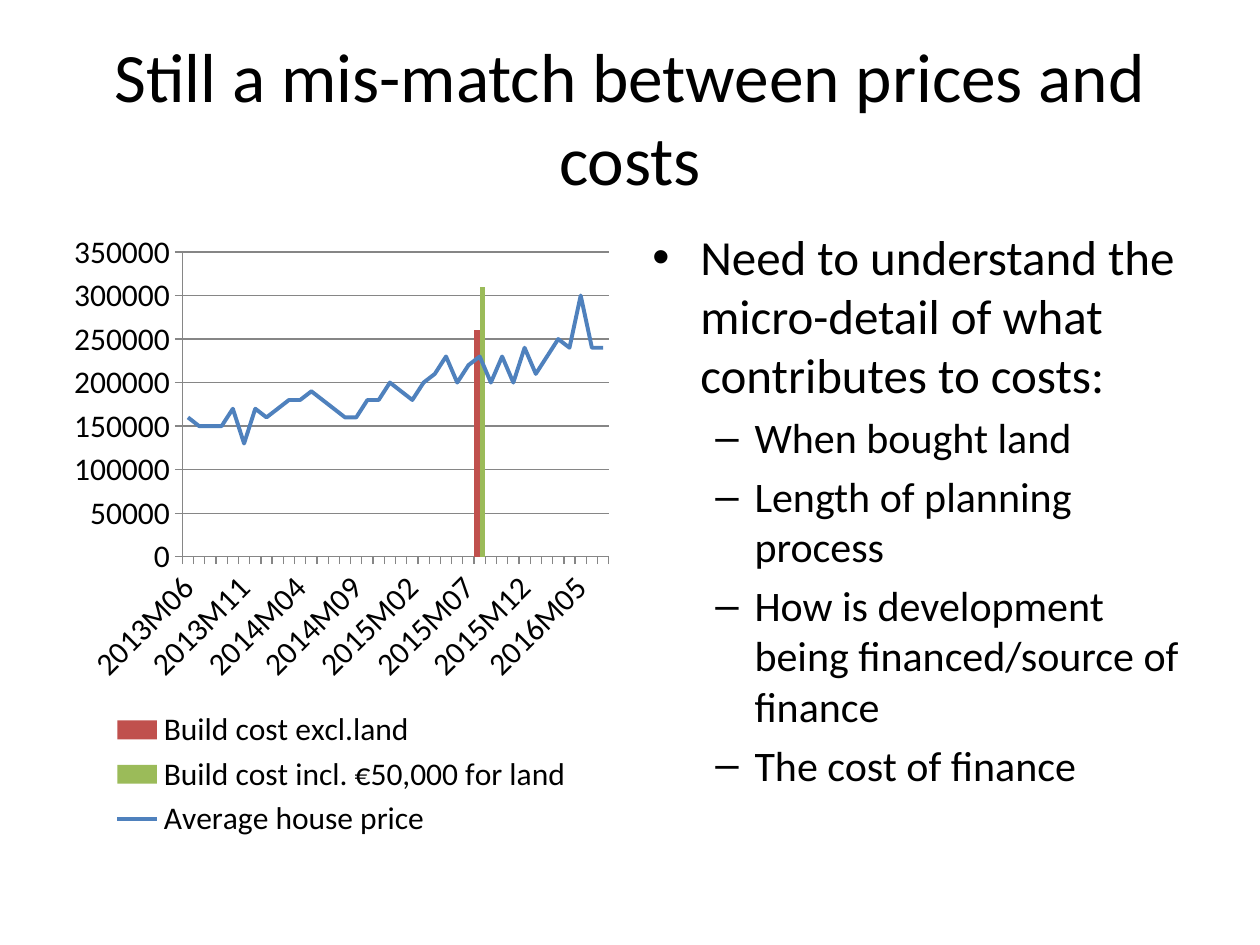
from lxml import etree
from pptx import Presentation
from pptx import util as u
from pptx.chart import data
from pptx.dml import color
from pptx.enum import chart as ch, text
from pptx.oxml import ns

Inches, Pt = u.Inches, u.Pt
BLACK = color.RGBColor(0x00, 0x00, 0x00)
GREY = color.RGBColor(0x86, 0x86, 0x86)
RED = color.RGBColor(0xC0, 0x50, 0x4D)
GREEN = color.RGBColor(0x9B, 0xBB, 0x59)
BLUE = color.RGBColor(0x4F, 0x81, 0xBD)
FONT = "Calibri"


def add_run(paragraph, words, size):
    run = paragraph.add_run()
    run.text = words
    run.font.name, run.font.size = FONT, Pt(size)
    run.font.color.rgb = BLACK


def add_element(parent, tag, **attributes):
    return etree.SubElement(parent, ns.qn(tag), attributes)


presentation = Presentation()
presentation.slide_width, presentation.slide_height = Inches(10), Inches(7.5)
slide = presentation.slides.add_slide(presentation.slide_layouts[6])

# Title
title = slide.shapes.add_textbox(Inches(0.5), Inches(0.3), Inches(9), Inches(1.25))
title.text_frame.word_wrap = True
title.text_frame.vertical_anchor = text.MSO_ANCHOR.MIDDLE
paragraph = title.text_frame.paragraphs[0]
paragraph.alignment = text.PP_ALIGN.CENTER
add_run(paragraph, "Still a mis-match between prices and costs", 39.6)

# Chart data: monthly prices in thousands, build costs in one month only
prices = [160, 150, 150, 150, 170, 130, 170, 160, 170, 180, 180, 190, 180,
          170, 160, 160, 180, 180, 200, 190, 180, 200, 210, 230, 200, 220,
          230, 200, 230, 200, 240, 210, 230, 250, 240, 300, 240, 240]
# Months are counted from June 2013
months = [f"{2013 + i // 12}M{i % 12 + 1:02}" for i in range(5, 5 + len(prices))]
build_month = months.index("2015M08")
chart_data = data.CategoryChartData()
chart_data.categories = months
for name, cost in (("Build cost excl.land", 260000),
                   ("Build cost incl. €50,000 for land", 310000)):
    chart_data.add_series(
        name, [cost if i == build_month else None for i in range(len(months))])
chart_data.add_series("Average house price", [price * 1000 for price in prices])

chart = slide.shapes.add_chart(
    ch.XL_CHART_TYPE.COLUMN_CLUSTERED, Inches(0.5), Inches(1.75),
    Inches(4.42), Inches(4.95), chart_data).chart
chart.font.name, chart.font.size = FONT, Pt(18)
chart.font.color.rgb = BLACK
chart.has_title = False
chart.has_legend = True
chart.legend.position = ch.XL_LEGEND_POSITION.BOTTOM
chart.legend.include_in_layout = False

# Columns
columns = chart.plots[0]
columns.vary_by_categories = False
columns.gap_width, columns.overlap = 0, 0
for series, fill in zip(list(columns.series)[:2], (RED, GREEN)):
    series.format.fill.solid()
    series.format.fill.fore_color.rgb = fill

# Price series moves to a line plot on the same axes
bar_chart = columns._element
price_series = columns.series[2]._element
for bar_setting in price_series.findall(ns.qn("c:invertIfNegative")):
    price_series.remove(bar_setting)
line_chart = bar_chart.makeelement(ns.qn("c:lineChart"))
bar_chart.addnext(line_chart)
add_element(line_chart, "c:grouping", val="standard")
add_element(line_chart, "c:varyColors", val="0")
line_chart.append(price_series)
add_element(line_chart, "c:marker", val="1")
for axis_id in bar_chart.findall(ns.qn("c:axId")):
    add_element(line_chart, "c:axId", val=axis_id.get("val"))
line = chart.plots[1].series[0]
line.smooth = False
line.marker.style = ch.XL_MARKER_STYLE.NONE
line.format.line.color.rgb = BLUE
line.format.line.width = Pt(2.25)

# Axes
value_axis, category_axis = chart.value_axis, chart.category_axis
value_axis.minimum_scale, value_axis.maximum_scale = 0, 350000
value_axis.major_unit = 50000
value_axis.has_major_gridlines = True
value_axis.major_gridlines.format.line.color.rgb = GREY
for axis in (value_axis, category_axis):
    axis.major_tick_mark = ch.XL_TICK_MARK.OUTSIDE
    axis.format.line.color.rgb = GREY
    axis.tick_labels.font.size = Pt(18)
category_axis._element.find(
    ns.qn("c:txPr") + "/" + ns.qn("a:bodyPr")).set("rot", "-2700000")
no_multi_level = category_axis._element.find(ns.qn("c:noMultiLvlLbl"))
for tag, step in (("c:tickLblSkip", "5"), ("c:tickMarkSkip", "1")):
    no_multi_level.addprevious(no_multi_level.makeelement(ns.qn(tag), val=step))

# Bulleted list
body = slide.shapes.add_textbox(Inches(5.08), Inches(1.75), Inches(4.42), Inches(4.95))
body.text_frame.word_wrap = True
points = [
    (0, "Need to understand the micro-detail of what contributes to costs:"),
    (1, "When bought land"),
    (1, "Length of planning process"),
    (1, "How is development being financed/source of finance"),
    (1, "The cost of finance"),
]
# Bullet, left margin, hanging indent and text size by level
levels = [("•", 0.38, -0.38, 28), ("–", 0.81, -0.31, 24)]
for i, (level, words) in enumerate(points):
    bullet, margin, indent, size = levels[level]
    paragraph = body.text_frame.paragraphs[0] if i == 0 else body.text_frame.add_paragraph()
    paragraph.level = level
    paragraph.space_before = Pt(size * 0.2 if i else 0)
    properties = paragraph._p.get_or_add_pPr()
    properties.set("marL", str(Inches(margin)))
    properties.set("indent", str(Inches(indent)))
    add_element(properties, "a:buFont", typeface="Arial")
    add_element(properties, "a:buChar", char=bullet)
    add_run(paragraph, words, size)

presentation.save("out.pptx")
